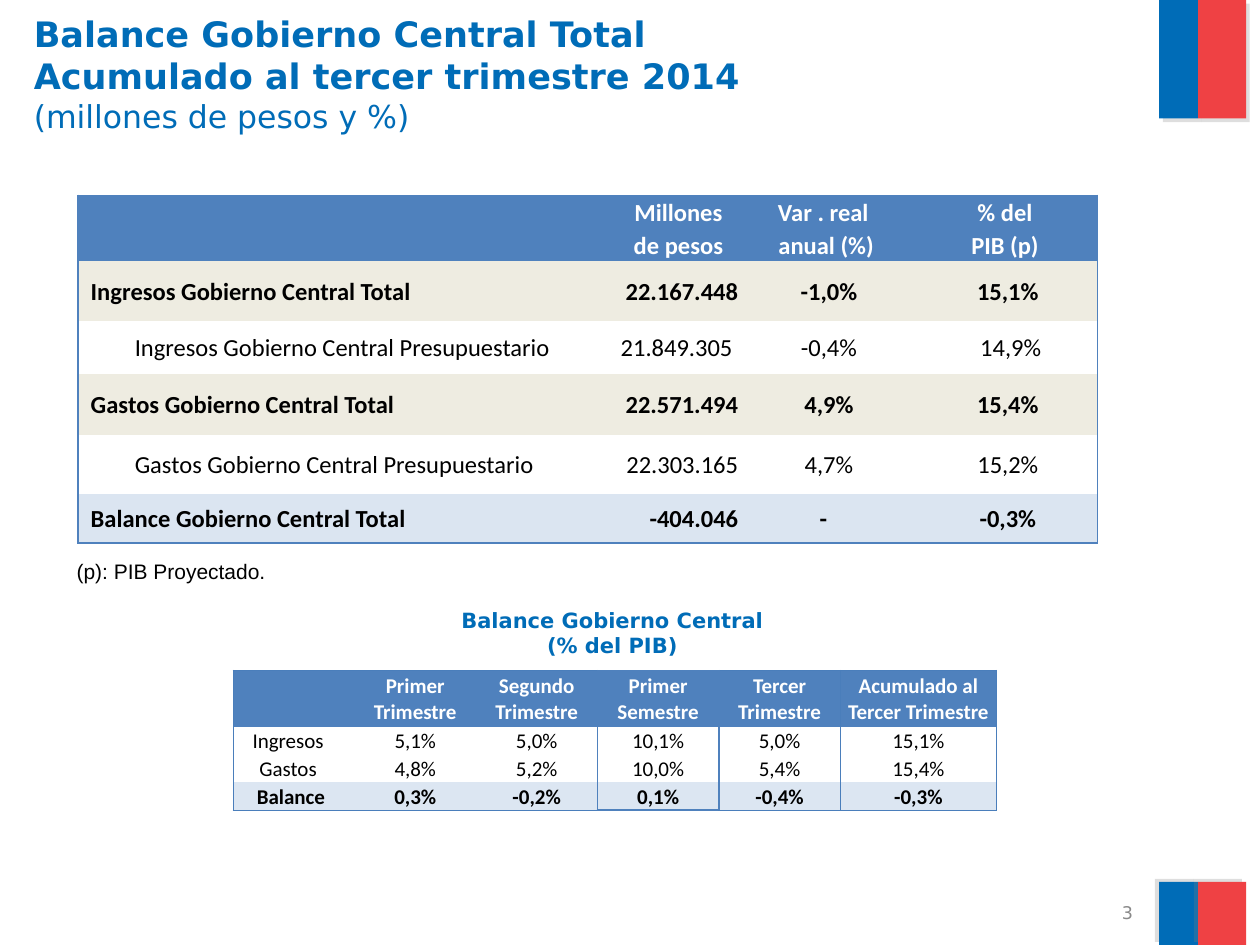
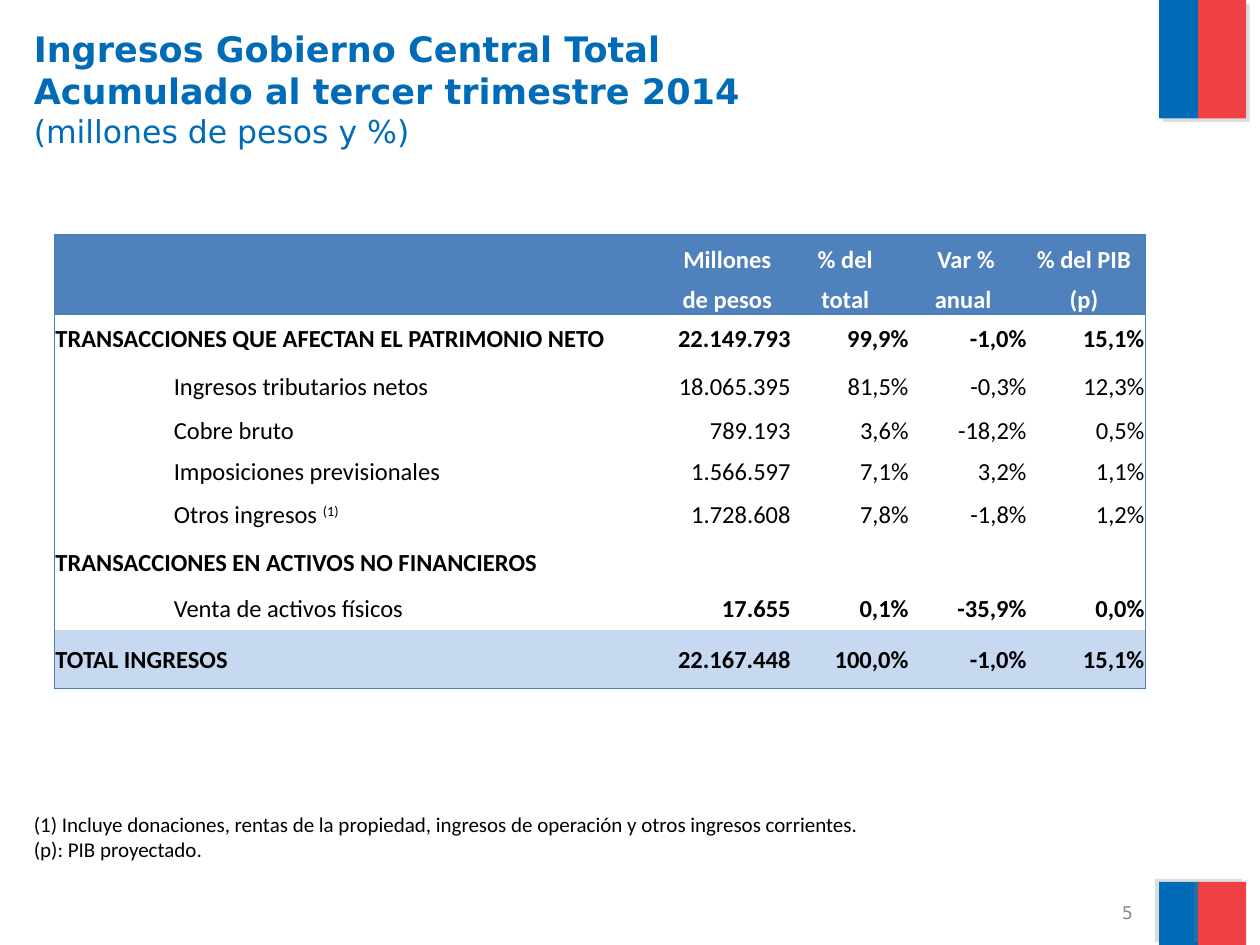
from dataclasses import dataclass, field

import lxml.etree as etree
import pptx
import pptx.dml.color
import pptx.enum.shapes
import pptx.enum.text
import pptx.oxml.ns
import pptx.util

# The page is a grid of 100 columns by 75 rows; every length below counts grid squares.
COLUMNS, ROWS = 100, 75
SQUARE = pptx.util.Inches(0.1)

COLORS = {
    "brand_blue": "006CB7",
    "brand_red": "EF4144",
    "shadow": "808080",
    "page_number": "898989",
    "header": "4F81BD",
    "thin_line": "4A7EBB",
    "section": "EEECE1",
    "balance": "DBE5F1",
    "quarter_balance": "DCE6F2",
    "total": "C6D9F1",
    "white": "FFFFFF",
    "black": "000000",
}
TITLE_FONT, TABLE_FONT, NOTE_FONT = "DejaVu Sans", "Calibri", "Arial"
NO_TABLE_STYLE = "{2D5ABB26-0587-4C30-8999-92F81FD0307C}"
CELL_MARGIN = 0.1
NUDGE = 0.45  # width of one word space in a table

ALIGN = {
    "l": pptx.enum.text.PP_ALIGN.LEFT,
    "c": pptx.enum.text.PP_ALIGN.CENTER,
    "r": pptx.enum.text.PP_ALIGN.RIGHT,
}
TOP = pptx.enum.text.MSO_ANCHOR.TOP
MIDDLE = pptx.enum.text.MSO_ANCHOR.MIDDLE
BOTTOM = pptx.enum.text.MSO_ANCHOR.BOTTOM


@dataclass(frozen=True)
class Area:
    left: float
    top: float
    width: float
    height: float

    def emu(self) -> tuple:
        return tuple(grid(n) for n in (self.left, self.top, self.width, self.height))


@dataclass(frozen=True)
class Bar:
    area: Area
    color: str
    shadow_angle: int


@dataclass(frozen=True)
class Style:
    size: float
    font: str
    color: str = "black"
    bold: bool = False


@dataclass(frozen=True)
class Row:
    """One table row; cells from column bold_from onwards are bold."""
    height: float
    texts: tuple
    fill: str = ""
    bold_from: int = 99


@dataclass(frozen=True)
class Frame:
    """Outline around a block of columns over the whole table height."""
    first: int
    last: int
    color: str
    width: float


@dataclass(frozen=True)
class TableSpec:
    left: float
    top: float
    columns: tuple
    rows: tuple
    align: str
    size: float
    frames: tuple
    header_rows: int = 1
    header_anchor: object = MIDDLE
    merges: tuple = ()
    nudges: dict = field(default_factory=dict)  # (row, column): spaces, leftwards if positive


BARS = [
    Bar(Area(left, top, width, height), color, angle)
    for top, height, angle in ((0, 9.4, 45), (70, 5, 215))
    for left, width, color in ((92, 3.1, "brand_blue"), (95.1, 3.8, "brand_red"))
]

BALANCE_TABLE = TableSpec(
    left=6.2, top=15.5, columns=(4.4, 38.4, 9.7, 14.2, 14.2), align="llrcc", size=14,
    header_rows=2, header_anchor=BOTTOM,
    rows=(
        Row(2.6, ("", "", "Millones", "Var . real", "% del"), "header", 0),
        Row(2.6, ("", "", "de pesos", "anual (%)", "PIB (p)"), "header", 0),
        Row(4.8, ("Ingresos Gobierno Central Total", "", "22.167.448", "-1,0%", "15,1%"), "section", 0),
        Row(4.2, ("", "Ingresos Gobierno Central Presupuestario", "21.849.305", "-0,4%", "14,9%")),
        Row(4.8, ("Gastos Gobierno Central Total", "", "22.571.494", "4,9%", "15,4%"), "section", 0),
        Row(4.7, ("", "Gastos Gobierno Central Presupuestario", "22.303.165", "4,7%", "15,2%")),
        Row(3.9, ("Balance Gobierno Central Total", "", "-404.046", "-", "-0,3%"), "balance", 0),
    ),
    frames=(Frame(0, 4, "header", 1),),
    merges=((0, 0, 1, 1), (2, 0, 2, 1), (4, 0, 4, 1), (6, 0, 6, 1)),
    nudges={(0, 3): 2, (0, 4): 1, (1, 3): 1, (1, 4): 1, (2, 0): -2, (3, 2): 1,
            (3, 4): -1, (4, 0): -2, (6, 0): -2, (6, 3): 2},
)

QUARTER_TABLE = TableSpec(
    left=18.5, top=53.2, columns=(9.64,) * 5 + (12.4,), align="cccccc", size=12,
    rows=(
        Row(4.5, ("", "Primer Trimestre", "Segundo Trimestre", "Primer Semestre",
                  "Tercer Trimestre", "Acumulado al Tercer Trimestre"), "header", 0),
        Row(2.2, ("Ingresos", "5,1%", "5,0%", "10,1%", "5,0%", "15,1%")),
        Row(2.2, ("Gastos", "4,8%", "5,2%", "10,0%", "5,4%", "15,4%")),
        Row(2.2, ("Balance", "0,3%", "-0,2%", "0,1%", "-0,4%", "-0,3%"), "quarter_balance", 0),
    ),
    frames=(Frame(0, 5, "thin_line", 0.5), Frame(5, 5, "thin_line", 0.5), Frame(3, 3, "header", 1)),
    nudges={(1, 0): 2, (2, 0): 2, (3, 0): 1},
)

INCOME_TABLE = TableSpec(
    left=4.3, top=18.6, columns=(9.4, 39.8) + (9.36,) * 4, align="llrrrr", size=14,
    header_rows=2, header_anchor=BOTTOM,
    rows=(
        Row(3.2, ("", "", "Millones", "% del", "Var %", "% del PIB"), "header", 0),
        Row(3.2, ("", "", "de pesos", "total", "anual", "(p)"), "header", 0),
        Row(3.7, ("TRANSACCIONES QUE AFECTAN EL PATRIMONIO NETO", "",
                  "22.149.793", "99,9%", "-1,0%", "15,1%"), bold_from=0),
        Row(3.9, ("", "Ingresos tributarios netos", "18.065.395", "81,5%", "-0,3%", "12,3%")),
        Row(3.2, ("", "Cobre bruto", "789.193", "3,6%", "-18,2%", "0,5%")),
        Row(3.2, ("", "Imposiciones previsionales", "1.566.597", "7,1%", "3,2%", "1,1%")),
        Row(3.7, ("", "Otros ingresos ^(1)", "1.728.608", "7,8%", "-1,8%", "1,2%")),
        Row(3.9, ("TRANSACCIONES EN ACTIVOS NO FINANCIEROS", "", "", "", "", ""), bold_from=0),
        Row(3.4, ("", "Venta de activos físicos", "17.655", "0,1%", "-35,9%", "0,0%"), bold_from=2),
        Row(4.7, ("TOTAL INGRESOS", "", "22.167.448", "100,0%", "-1,0%", "15,1%"), "total", 0),
    ),
    frames=(Frame(0, 5, "thin_line", 0.5),),
    merges=((0, 0, 1, 1), (2, 0, 2, 1), (7, 0, 7, 5), (9, 0, 9, 1)),
    nudges={(0, 2): 2, (0, 3): 2, (0, 4): 1, (0, 5): 1,
            (1, 2): 2, (1, 3): 2, (1, 4): 2, (1, 5): 1},
)


def grid(squares: float) -> int:
    return round(squares * SQUARE)


def rgb(name: str) -> pptx.dml.color.RGBColor:
    return pptx.dml.color.RGBColor.from_string(COLORS[name])


def child(parent, tag: str, **attributes: str):
    return etree.SubElement(parent, pptx.oxml.ns.qn(tag), attributes)


def add_span(para, text: str, style: Style):
    span = para.add_run()
    span.text = text
    span.font.size = pptx.util.Pt(style.size)
    span.font.name = style.font
    span.font.bold = style.bold
    span.font.color.rgb = rgb(style.color)
    return span


def add_text(page, area: Area, lines, style: Style, align: str = "l", anchor=TOP, wrap: bool = True):
    """Add a text box with one paragraph per line."""
    frame = page.shapes.add_textbox(*area.emu()).text_frame
    frame.word_wrap = wrap
    frame.vertical_anchor = anchor
    for index, line in enumerate(lines):
        para = frame.add_paragraph() if index else frame.paragraphs[0]
        para.alignment = ALIGN[align]
        if line:
            add_span(para, line, style)
    return frame


def add_title(page, top: float, subject: str) -> None:
    heading = Style(20, TITLE_FONT, "brand_blue", True)
    para = add_text(page, Area(1.7, top, 89.3, 12.5), [subject], heading).paragraphs[0]
    para.add_line_break()
    add_span(para, "Acumulado al tercer trimestre 2014", heading)
    para.add_line_break()
    add_span(para, "(millones de pesos y %)", Style(18, TITLE_FONT, "brand_blue"))


def add_bar(page, bar: Bar) -> None:
    shape = page.shapes.add_shape(pptx.enum.shapes.MSO_SHAPE.RECTANGLE, *bar.area.emu())
    shape.fill.solid()
    shape.fill.fore_color.rgb = rgb(bar.color)
    shape.line.fill.background()
    shape.shadow.inherit = False
    effects = shape._element.spPr.find(pptx.oxml.ns.qn("a:effectLst"))
    shadow = child(effects, "a:outerShdw", dist=str(pptx.util.Pt(3)),
                   dir=str(bar.shadow_angle * 60000), rotWithShape="0")
    child(child(shadow, "a:srgbClr", val=COLORS["shadow"]), "a:alpha", val="25000")


def fill_cell(cell, text: str, row: Row, style: Style, align: str, anchor, nudge: int) -> None:
    cell.margin_left = grid(CELL_MARGIN + NUDGE * max(-nudge, 0))
    cell.margin_right = grid(CELL_MARGIN + NUDGE * max(nudge, 0))
    cell.margin_top = grid(CELL_MARGIN)
    cell.margin_bottom = 0
    cell.vertical_anchor = anchor
    if row.fill:
        cell.fill.solid()
        cell.fill.fore_color.rgb = rgb(row.fill)
    else:
        cell.fill.background()
    para = cell.text_frame.paragraphs[0]
    para.alignment = ALIGN[align]
    if not text:
        child(para._p, "a:endParaRPr", sz="1000")
        return
    body, _, raised = text.partition("^")
    add_span(para, body, style)
    if raised:
        add_span(para, raised, style)._r.get_or_add_rPr().set("baseline", "30000")


def draw_borders(cell, row: int, column: int, spec: TableSpec) -> None:
    edges = {}
    end_row, end_column = row + cell.span_height - 1, column + cell.span_width - 1
    for frame in spec.frames:
        inside = frame.first <= column <= frame.last
        touches = {
            "L": column == frame.first,
            "R": end_column == frame.last or end_column == frame.first - 1,
            "T": inside and row == 0,
            "B": inside and end_row == len(spec.rows) - 1,
        }
        if column == frame.last + 1:
            touches["L"] = True
        edges.update({side: frame for side, touched in touches.items() if touched})
    properties = cell._tc.get_or_add_tcPr()
    for index, side in enumerate(side for side in "LRTB" if side in edges):
        line = child(properties, f"a:ln{side}", w=str(pptx.util.Pt(edges[side].width)))
        child(child(line, "a:solidFill"), "a:srgbClr", val=COLORS[edges[side].color])
        properties.insert(index, line)


def add_data_table(page, spec: TableSpec) -> None:
    area = Area(spec.left, spec.top, sum(spec.columns), sum(row.height for row in spec.rows))
    table = page.shapes.add_table(len(spec.rows), len(spec.columns), *area.emu()).table
    table.first_row = table.horz_banding = False
    table._tbl.tblPr.find(pptx.oxml.ns.qn("a:tableStyleId")).text = NO_TABLE_STYLE
    for column, width in enumerate(spec.columns):
        table.columns[column].width = grid(width)
    for top, left, bottom, right in spec.merges:
        table.cell(top, left).merge(table.cell(bottom, right))
    for r, row in enumerate(spec.rows):
        table.rows[r].height = grid(row.height)
        header = r < spec.header_rows
        for c, text in enumerate(row.texts):
            style = Style(spec.size, TABLE_FONT, "white" if header else "black", c >= row.bold_from)
            cell = table.cell(r, c)
            fill_cell(cell, text, row, style, "c" if header else spec.align[c],
                      spec.header_anchor if header else MIDDLE, spec.nudges.get((r, c), 0))
            draw_borders(cell, r, c, spec)


def add_page(deck, number: int, title_top: float, subject: str):
    """Add a page with the shared bars, title and page number."""
    page = deck.slides.add_slide(deck.slide_layouts[6])
    for bar in BARS:
        add_bar(page, bar)
    add_title(page, title_top, subject)
    add_text(page, Area(67.6, 71.4, 23.3, 2.1), [str(number)],
             Style(10, TITLE_FONT, "page_number"), "r", MIDDLE)
    return page


def main() -> None:
    deck = pptx.Presentation()
    deck.slide_width, deck.slide_height = grid(COLUMNS), grid(ROWS)

    balance = add_page(deck, 3, 0.5, "Balance Gobierno Central Total")
    add_text(balance, Area(5.1, 43.8, 23.6, 3), ["(p): PIB Proyectado."], Style(12, NOTE_FONT))
    add_text(balance, Area(35.3, 47.7, 26.6, 5), ["Balance Gobierno Central", "(% del PIB)"],
             Style(12, TITLE_FONT, "brand_blue", True), "c", wrap=False)
    add_data_table(balance, BALANCE_TABLE)
    add_data_table(balance, QUARTER_TABLE)

    income = add_page(deck, 5, 1.7, "Ingresos Gobierno Central Total")
    add_text(income, Area(1.7, 63.9, 85.8, 5), [
        "(1) Incluye donaciones, rentas de la propiedad, ingresos de operación y otros ingresos corrientes.",
        "(p): PIB proyectado.",
    ], Style(12, TABLE_FONT))
    add_data_table(income, INCOME_TABLE)

    deck.save("out.pptx")


if __name__ == "__main__":
    main()
